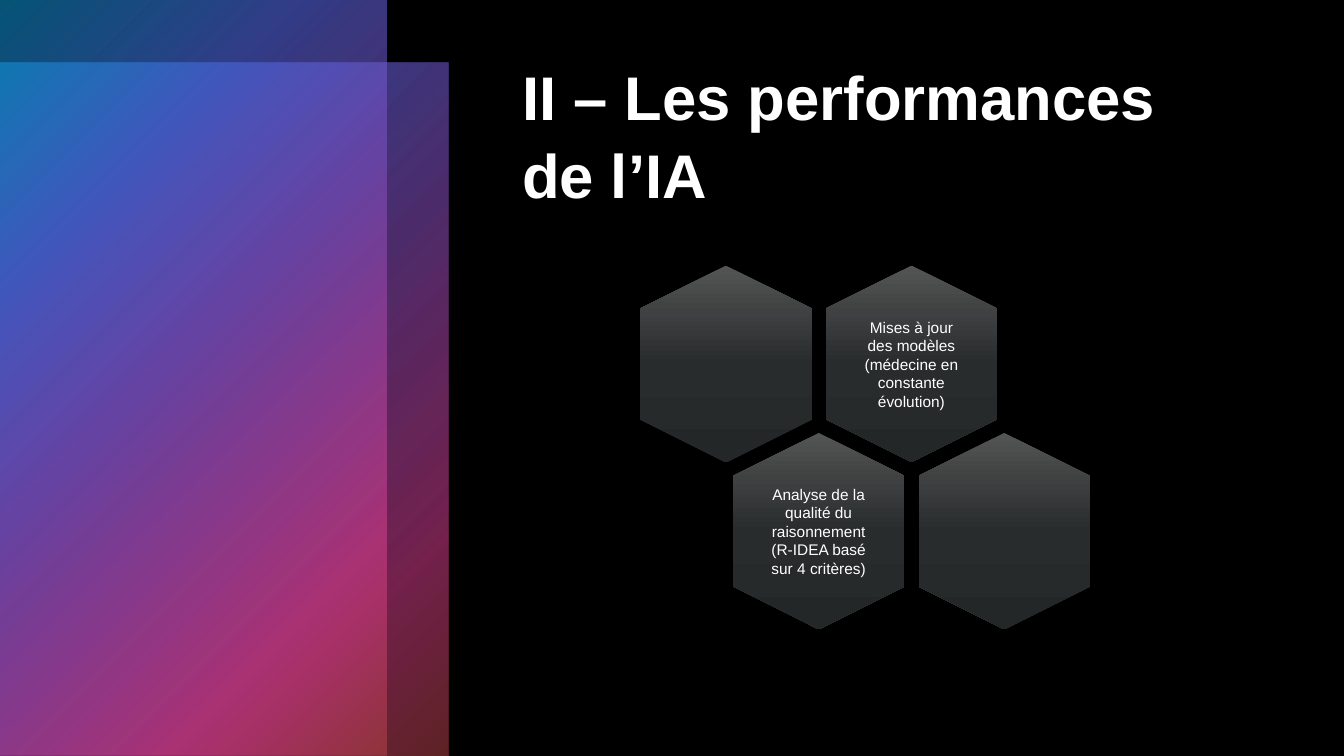
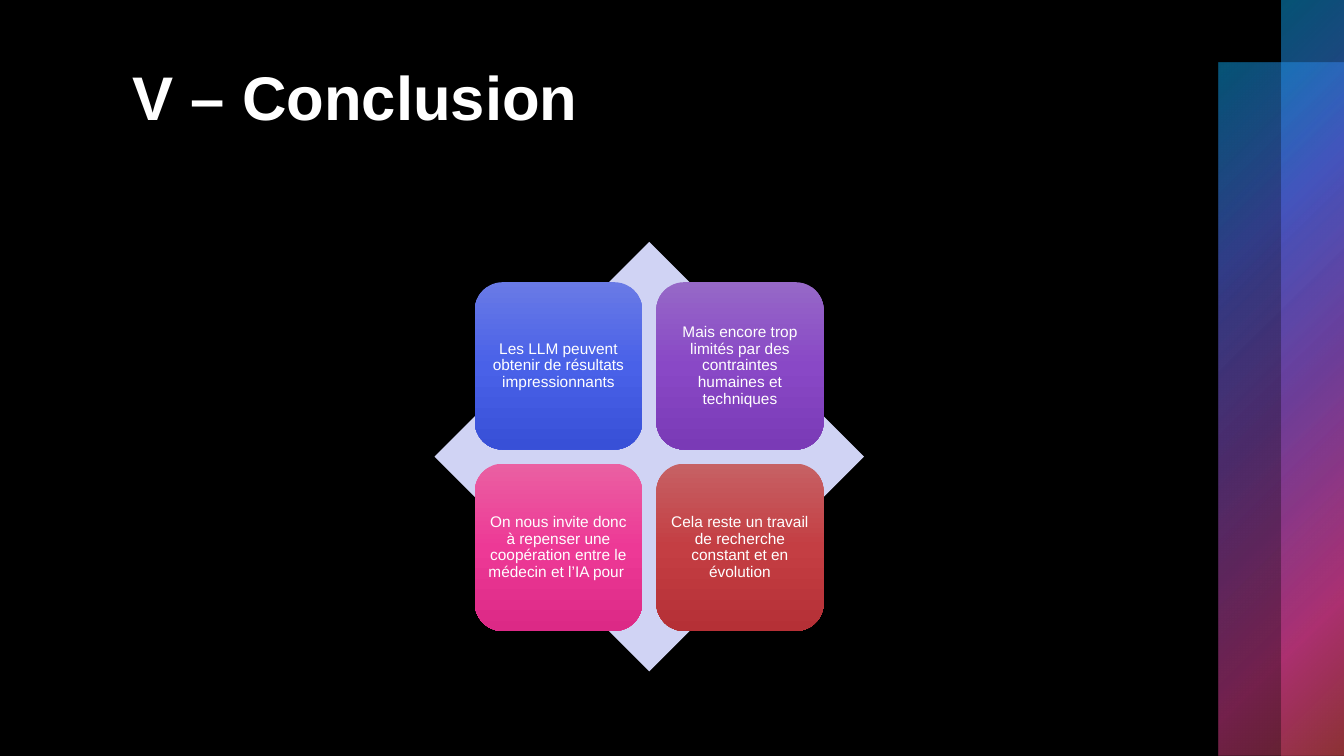
"""Builds two dark slides: hexagons on performance and a conclusion diamond."""
from pptx import Presentation
from pptx.dml.color import RGBColor
from pptx.enum.shapes import MSO_SHAPE
from pptx.enum.text import MSO_ANCHOR, PP_ALIGN
from pptx.oxml import parse_xml
from pptx.oxml.ns import nsdecls, qn
from pptx.util import Inches, Pt

RECT, ROUND = MSO_SHAPE.RECTANGLE, MSO_SHAPE.ROUNDED_RECTANGLE
HEXAGON, DIAMOND = MSO_SHAPE.HEXAGON, MSO_SHAPE.DIAMOND
MIDDLE, CENTER = MSO_ANCHOR.MIDDLE, PP_ALIGN.CENTER

FONT = "Arial"
BLACK = RGBColor(0x00, 0x00, 0x00)
WHITE = RGBColor(0xFF, 0xFF, 0xFF)
LILAC = RGBColor(0xD0, 0xD3, 0xF4)
SKY = RGBColor(0x0B, 0xA5, 0xE8)
INDIGO = RGBColor(0x50, 0x66, 0xE1)
VIOLET = RGBColor(0x89, 0x4E, 0xC0)
PINK = RGBColor(0xE5, 0x41, 0x96)
RED = RGBColor(0xBE, 0x44, 0x49)


def shades(*codes):
    """Return a top, middle and bottom stop for three hex codes."""
    return [(spot, RGBColor.from_string(code), 100)
            for spot, code in zip((0, 50, 100), codes)]


GREYS = shades("535454", "292C2D", "242728")
BLUES = shades("697AE6", "4961E8", "3850D7")
PURPLES = shades("9668C7", "8948C6", "7A3AB6")
PINKS = shades("EA60A2", "ED3996", "DC2986")
REDS = shades("C66164", "C43E43", "B53036")
GLOW = [(0, SKY, 50), (25, INDIGO, 60), (50, VIOLET, 55),
        (81, PINK, 50), (99, RED, 50)]

DOWN = '<a:lin ang="5400000" scaled="0"/>'
CORNER = '<a:path path="circle"><a:fillToRect r="100000" b="100000"/></a:path>'

WIDTH, HEIGHT, EDGE = 13.33, 7.5, 0.62

HEXES = {
    "title": "II – Les performances de l’IA",
    "place": (5.08, 0.5, 7.03, 1.7),
    "bands": [(0, EDGE, 4.45), (0, 0, 3.83)],
    "cells": [["", "Mises à jour des modèles (médecine en constante évolution)"],
              ["Analyse de la qualité du raisonnement (R-IDEA basé sur 4 critères)",
               ""]],
}
CLOSE = {
    "title": "V – Conclusion",
    "place": (1.22, 0.5, 10.37, 1.7),
    "bands": [(WIDTH - 2 * EDGE, EDGE, 2 * EDGE), (WIDTH - EDGE, 0, EDGE)],
    "cards": [
        ("Les LLM peuvent obtenir de résultats impressionnants", BLUES),
        ("Mais encore trop limités par des contraintes humaines et techniques",
         PURPLES),
        ("On nous invite donc à repenser une coopération entre le médecin "
         "et l’IA pour ", PINKS),
        ("Cela reste un travail de recherche constant et en évolution", REDS),
    ],
}


def blend(shape, stops, course):
    """Fill a shape with gradient stops of position, colour and opacity."""
    marks = "".join(
        f'<a:gs pos="{spot * 1000}"><a:srgbClr val="{color}">'
        f'<a:alpha val="{alpha * 1000}"/></a:srgbClr></a:gs>'
        for spot, color, alpha in stops)
    shape.fill.solid()
    props = shape._element.spPr
    props.replace(props.find(qn("a:solidFill")), parse_xml(
        f'<a:gradFill {nsdecls("a")} rotWithShape="0">'
        f'<a:gsLst>{marks}</a:gsLst>{course}</a:gradFill>'))


def draw(slide, kind, left, top, width, height):
    """Add a plain shape without line or shadow."""
    shape = slide.shapes.add_shape(
        kind, Inches(left), Inches(top), Inches(width), Inches(height))
    shape.shadow.inherit = False
    shape.line.fill.background()
    return shape


def write(shape, text, size, bold=False, space=1.0):
    """Put one white paragraph in a shape and return its frame."""
    frame = shape.text_frame
    frame.word_wrap = True
    frame.text = text
    para = frame.paragraphs[0]
    para.line_spacing = space
    font = para.runs[0].font
    font.name, font.size, font.bold = FONT, Pt(size), bold
    font.color.rgb = WHITE
    return frame


def label(shape, text, space):
    """Write a small centred label with narrow margins."""
    frame = write(shape, text, 11, space=space)
    frame.vertical_anchor = MIDDLE
    frame.paragraphs[0].alignment = CENTER
    frame.margin_left = frame.margin_right = Inches(0.05)
    frame.margin_top = frame.margin_bottom = Inches(0.05)


def start(deck, page):
    """Add a black slide with its glowing bands and title."""
    slide = deck.slides.add_slide(deck.slide_layouts[6])
    slide.background.fill.solid()
    slide.background.fill.fore_color.rgb = BLACK
    for left, top, width in page["bands"]:
        band = draw(slide, RECT, left, top, width, HEIGHT - top)
        blend(band, GLOW, CORNER)
    box = slide.shapes.add_textbox(*map(Inches, page["place"]))
    write(box, page["title"], 44, bold=True, space=1.05)
    return slide


def comb(slide, cells):
    """Lay out staggered rows of upright hexagons."""
    long, short = 1.95, 1.7
    wide, high = 1.17, 1.34
    for row, texts in enumerate(cells):
        for col, text in enumerate(texts):
            mid_x = 7.2 + 1.84 * col + 0.92 * row
            mid_y = 3.61 + 1.66 * row
            cell = draw(slide, HEXAGON, mid_x - long / 2, mid_y - short / 2,
                        long, short)
            cell.adjustments[0] = 0.25
            cell.rotation = 90
            blend(cell, GREYS, DOWN)
            if text:
                box = slide.shapes.add_textbox(
                    Inches(mid_x - wide / 2), Inches(mid_y - high / 2),
                    Inches(wide), Inches(high))
                label(box, text, 1.0)


def matrix(slide, cards):
    """Set four cards around the centre of a diamond."""
    mid_x, mid_y, span = 6.44, 4.53, 4.26
    side, step = 1.66, 1.8
    back = draw(slide, DIAMOND, mid_x - span / 2, mid_y - span / 2, span, span)
    back.fill.solid()
    back.fill.fore_color.rgb = LILAC
    left, top = (mid - (step + side) / 2 for mid in (mid_x, mid_y))
    for index, (text, stops) in enumerate(cards):
        row, col = divmod(index, 2)
        card = draw(slide, ROUND, left + step * col, top + step * row,
                    side, side)
        blend(card, stops, DOWN)
        label(card, text, 0.9)


def main():
    """Build and save the deck."""
    deck = Presentation()
    deck.slide_width, deck.slide_height = Inches(WIDTH), Inches(HEIGHT)
    comb(start(deck, HEXES), HEXES["cells"])
    matrix(start(deck, CLOSE), CLOSE["cards"])
    deck.save("out.pptx")


if __name__ == "__main__":
    main()
